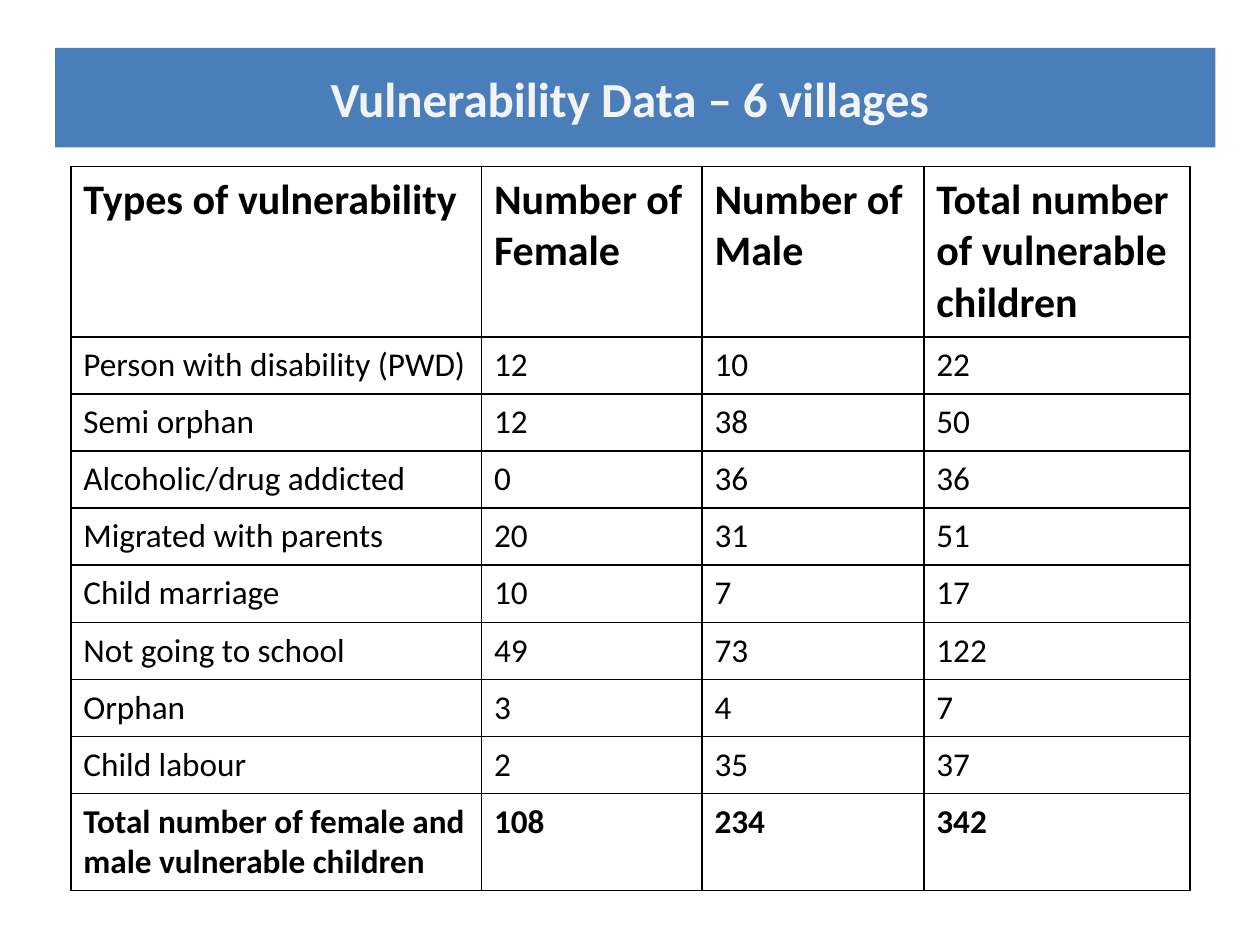
import pptx
import pptx.dml.color
import pptx.enum.shapes
import pptx.enum.text
import pptx.oxml
import pptx.oxml.ns
import pptx.util

Pt = pptx.util.Pt
RGBColor = pptx.dml.color.RGBColor
BLUE = RGBColor(0x4A, 0x7E, 0xBB)
PALE = RGBColor(0xF3, 0xF3, 0xF3)
BLACK = RGBColor(0, 0, 0)
WHITE = RGBColor(0xFF, 0xFF, 0xFF)

HEADINGS = ["Types of vulnerability", "Number of Female", "Number of Male",
            "Total number of vulnerable children"]
COUNTS = [
    ("Person with disability (PWD)", 12, 10, 22),
    ("Semi orphan", 12, 38, 50),
    ("Alcoholic/drug addicted", 0, 36, 36),
    ("Migrated with parents", 20, 31, 51),
    ("Child marriage", 10, 7, 17),
    ("Not going to school", 49, 73, 122),
    ("Orphan", 3, 4, 7),
    ("Child labour", 2, 35, 37),
]
TOTALS = ("Total number of female and male vulnerable children", 108, 234, 342)


def write(frame, text, size=19, bold=False, color=BLACK, font="Calibri",
          align=pptx.enum.text.PP_ALIGN.LEFT):
    para = frame.paragraphs[0]
    para.alignment = align
    span = para.add_run()
    span.text = text
    span.font.name = font
    span.font.size = Pt(size)
    span.font.bold = bold
    span.font.color.rgb = color


def add_borders(cell, color, width):
    properties = cell._tc.get_or_add_tcPr()
    namespace = pptx.oxml.ns.nsdecls("a")
    for index, side in enumerate(("lnL", "lnR", "lnT", "lnB")):
        properties.insert(index, pptx.oxml.parse_xml(
            f'<a:{side} {namespace} w="{Pt(width)}"><a:solidFill>'
            f'<a:srgbClr val="{color}"/></a:solidFill></a:{side}>'))


class VulnerabilitySlide:
    border_width = 1
    side_margin = 7.2
    top_margin = 4.75

    def __init__(self, deck):
        self.page = deck.slides.add_slide(deck.slide_layouts[6])

    def banner(self, text, left, top, width, height):
        box = self.page.shapes.add_shape(
            pptx.enum.shapes.MSO_SHAPE.RECTANGLE,
            Pt(left), Pt(top), Pt(width), Pt(height))
        box.shadow.inherit = False
        box.fill.solid()
        box.fill.fore_color.rgb = BLUE
        box.line.fill.background()
        box.text_frame.word_wrap = True
        box.text_frame.vertical_anchor = pptx.enum.text.MSO_ANCHOR.MIDDLE
        write(box.text_frame, text, size=28, bold=True, color=PALE,
              align=pptx.enum.text.PP_ALIGN.CENTER)

    def table(self, rows, left, top, widths, heights):
        grid = self.page.shapes.add_table(
            len(rows), len(widths), Pt(left), Pt(top),
            Pt(sum(widths)), Pt(sum(heights))).table
        for column, width in zip(grid.columns, widths):
            column.width = Pt(width)
        for number, (row, height) in enumerate(zip(rows, heights)):
            grid.rows[number].height = Pt(height)
            heading = number == 0
            bold = heading or number == len(rows) - 1
            for cell, value in zip(grid.rows[number].cells, row):
                self.cell(cell, str(value), 24 if heading else 19, bold)

    def cell(self, cell, text, size, bold):
        cell.margin_left = cell.margin_right = Pt(self.side_margin)
        cell.margin_top = cell.margin_bottom = Pt(self.top_margin)
        cell.fill.solid()
        cell.fill.fore_color.rgb = WHITE
        add_borders(cell, BLACK, self.border_width)
        write(cell.text_frame, text, size=size, bold=bold)


def main():
    deck = pptx.Presentation()
    deck.slide_width = Pt(720)
    deck.slide_height = Pt(540)
    slide = VulnerabilitySlide(deck)
    slide.banner("Vulnerability Data – 6 villages ", 31.5, 27.4, 663, 56.8)
    slide.table([HEADINGS, *COUNTS, TOTALS], 40.5, 95.2,
                widths=[234.6, 126, 126.8, 152],
                heights=[97.4] + [32.6] * len(COUNTS) + [55.6])
    deck.save("out.pptx")


if __name__ == "__main__":
    main()
